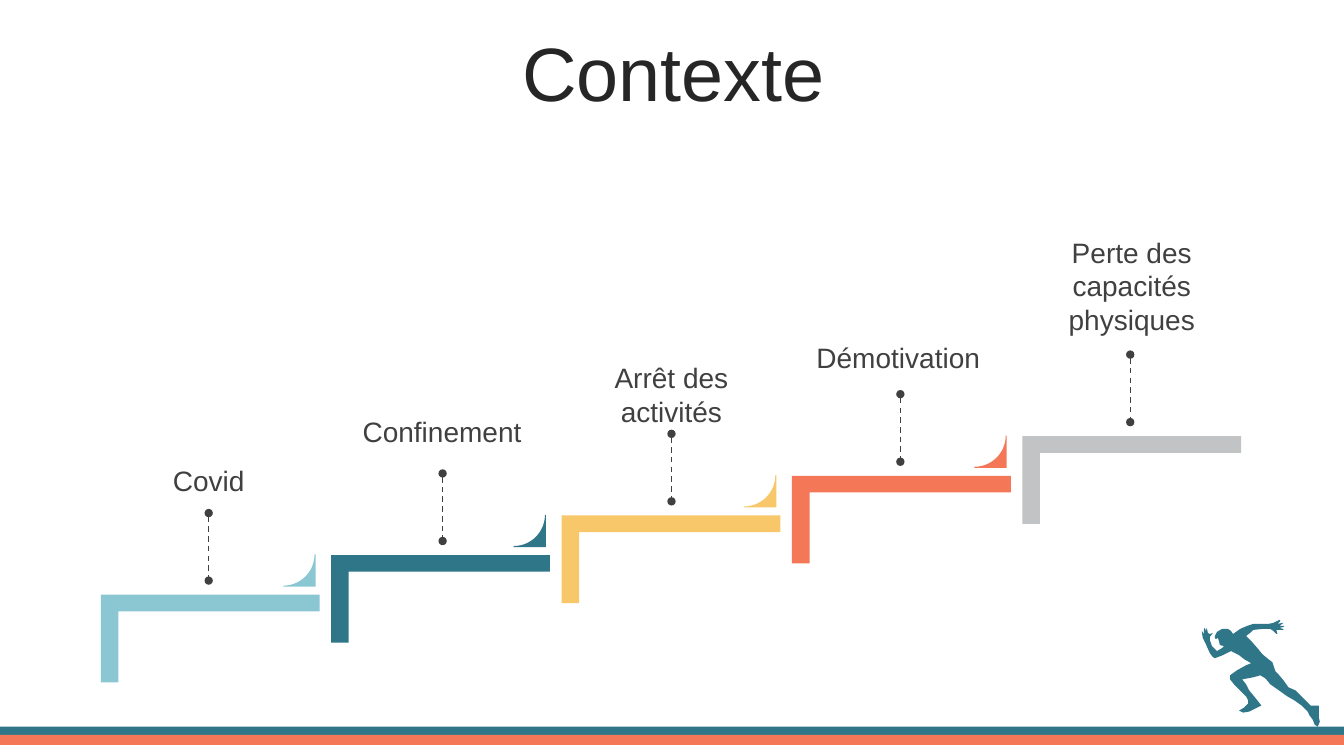
import math
from dataclasses import dataclass

import lxml.etree
import pptx
import pptx.dml.color
import pptx.enum.dml
import pptx.enum.shapes
import pptx.enum.text
import pptx.oxml.ns
import pptx.util

Inches = pptx.util.Inches
Points = list[tuple[float, float]]


@dataclass(frozen=True)
class Theme:
    font: str = "Arial"
    title_size: int = 54
    label_size: int = 20
    title: str = "262626"
    text: str = "404040"
    sky: str = "8AC7D3"
    teal: str = "307689"
    yellow: str = "F7C76A"
    coral: str = "F47758"
    grey: str = "C1C3C4"


@dataclass(frozen=True)
class Step:
    label: str
    color: str
    label_box: tuple[float, float, float, float]
    pin_x: float


THEME = Theme()

STEPS = [
    Step("Covid", THEME.sky, (0.85, 4.54, 2.44, 0.44), 2.07),
    Step("Confinement", THEME.teal, (3.22, 4.06, 2.33, 0.44), 4.39),
    Step("Arrêt des activités", THEME.yellow, (5.51, 3.53, 2.3, 0.77), 6.66),
    Step("Démotivation", THEME.coral, (7.76, 3.32, 2.3, 0.44), 8.93),
    Step("Perte des capacités physiques", THEME.grey, (10.02, 2.28, 2.41, 1.11), 11.21),
]

# Staircase geometry: each step moves right by RUN and up by RISE
FIRST_X, FIRST_Y = 1.0, 5.9
RUN, RISE = 2.285, 0.393
STEP_W, STEP_H = 2.17, 0.87
TAB_DX, TAB_DY, TAB_SIZE, TAB_RADIUS = 1.81, -0.4, 0.32, 0.31
PIN_DY, PIN_LENGTH = -0.81, 0.67

# Runner outline, starting from the back foot
RUNNER: Points = [
    (13.07, 7.21), (13.09, 7.16), (13.08, 7.11), (13.08, 7.0), (13.05, 7.0),
    (13.0, 7.0), (12.95, 6.95), (12.89, 6.89), (12.85, 6.85), (12.78, 6.82),
    (12.73, 6.75), (12.68, 6.69), (12.65, 6.66), (12.62, 6.57), (12.58, 6.54),
    (12.52, 6.49), (12.48, 6.44), (12.41, 6.36), (12.36, 6.31), (12.41, 6.27),
    # Back arm and hand
    (12.43, 6.25), (12.52, 6.24), (12.6, 6.24), (12.63, 6.26), (12.66, 6.29),
    (12.67, 6.29), (12.66, 6.25), (12.73, 6.25), (12.73, 6.24), (12.69, 6.23),
    (12.73, 6.22), (12.74, 6.21), (12.69, 6.21), (12.73, 6.18), (12.72, 6.18),
    (12.67, 6.19), (12.7, 6.16), (12.69, 6.15), (12.63, 6.18), (12.58, 6.19),
    (12.51, 6.19), (12.43, 6.19), (12.37, 6.21), (12.3, 6.24), (12.23, 6.29),
    # Head
    (12.21, 6.26), (12.18, 6.24), (12.12, 6.24), (12.07, 6.27), (12.05, 6.31),
    (12.05, 6.33), (12.06, 6.34), (12.08, 6.33), (12.09, 6.36), (12.1, 6.4),
    (12.14, 6.41), (12.12, 6.43), (12.07, 6.46),
    # Front arm and hand
    (12.02, 6.41), (12.0, 6.35), (12.0, 6.32), (12.03, 6.28), (12.0, 6.29),
    (11.98, 6.28), (11.97, 6.23), (11.96, 6.26), (11.95, 6.23), (11.94, 6.24),
    (11.94, 6.29), (11.92, 6.26), (11.92, 6.27), (11.93, 6.33), (11.96, 6.39),
    (12.0, 6.48), (12.03, 6.52), (12.05, 6.53), (12.13, 6.5), (12.21, 6.46),
    # Chest and front leg
    (12.29, 6.5), (12.34, 6.54), (12.41, 6.58), (12.36, 6.6), (12.27, 6.65),
    (12.2, 6.7), (12.2, 6.74), (12.24, 6.79), (12.3, 6.85), (12.36, 6.91),
    (12.38, 6.95), (12.38, 6.98), (12.34, 7.02), (12.29, 7.05), (12.33, 7.07),
    (12.39, 7.06), (12.45, 7.03), (12.51, 7.0), (12.48, 6.96), (12.44, 6.91),
    (12.39, 6.85), (12.36, 6.79), (12.32, 6.74), (12.43, 6.72), (12.5, 6.7),
    # Back leg
    (12.55, 6.73), (12.6, 6.79), (12.7, 6.86), (12.77, 6.91), (12.84, 6.95),
    (12.91, 7.0), (12.97, 7.06), (12.99, 7.1), (13.02, 7.14), (13.04, 7.19),
]


def rgb(color: str) -> pptx.dml.color.RGBColor:
    return pptx.dml.color.RGBColor.from_string(color)


def paint(sp, color: str) -> None:
    sp.shadow.inherit = False
    sp.fill.solid()
    sp.fill.fore_color.rgb = rgb(color)
    sp.line.fill.background()


def add_outline(shapes, points: Points, color: str) -> None:
    emu = [(Inches(x), Inches(y)) for x, y in points]
    builder = shapes.build_freeform(*emu[0], scale=1.0)
    builder.add_line_segments(emu[1:], close=True)
    paint(builder.convert_to_shape(), color)


def add_bar(shapes, y: float, color: str) -> None:
    kind = pptx.enum.shapes.MSO_SHAPE.RECTANGLE
    paint(shapes.add_shape(kind, 0, Inches(y), Inches(13.33), Inches(0.1)), color)


def add_text(shapes, box: tuple[float, float, float, float], text: str,
             size: int, color: str, spacing: float = 1.0) -> None:
    sp = shapes.add_textbox(*map(Inches, box))
    tf = sp.text_frame
    tf.word_wrap = True
    tf.vertical_anchor = pptx.enum.text.MSO_ANCHOR.MIDDLE
    p = tf.paragraphs[0]
    p.alignment = pptx.enum.text.PP_ALIGN.CENTER
    p.line_spacing = spacing
    r = p.add_run()
    r.text = text
    r.font.name = THEME.font
    r.font.size = pptx.util.Pt(size)
    r.font.color.rgb = rgb(color)


def add_stair(shapes, x: float, y: float, color: str) -> None:
    kind = pptx.enum.shapes.MSO_SHAPE.CORNER
    sp = shapes.add_shape(kind, Inches(x), Inches(y), Inches(STEP_W), Inches(STEP_H))
    sp.adjustments[0] = 0.19
    sp.adjustments[1] = 0.2
    sp._element.spPr.find(pptx.oxml.ns.qn("a:xfrm")).set("flipV", "1")
    paint(sp, color)


def add_tab(shapes, x: float, y: float, color: str) -> None:
    angles = [math.radians(a) for a in range(0, 91, 6)]
    arc = [(x + TAB_RADIUS * math.sin(a), y + TAB_RADIUS * math.cos(a)) for a in angles]
    corner = [(x + TAB_SIZE, y), (x + TAB_SIZE, y + TAB_SIZE), (x, y + TAB_SIZE)]
    add_outline(shapes, corner + arc, color)


def add_pin(shapes, x: float, y: float) -> None:
    kind = pptx.enum.shapes.MSO_CONNECTOR.STRAIGHT
    c = shapes.add_connector(kind, Inches(x), Inches(y), Inches(x), Inches(y + PIN_LENGTH))
    c.line.color.rgb = rgb(THEME.text)
    c.line.width = pptx.util.Pt(1)
    c.line.dash_style = pptx.enum.dml.MSO_LINE.DASH
    ln = c.line._get_or_add_ln()
    for end in ("a:headEnd", "a:tailEnd"):
        lxml.etree.SubElement(ln, pptx.oxml.ns.qn(end), type="oval")
    lxml.etree.SubElement(c._element.spPr, pptx.oxml.ns.qn("a:effectLst"))


def main() -> None:
    prs = pptx.Presentation()
    prs.slide_width, prs.slide_height = Inches(13.33), Inches(7.5)
    shapes = prs.slides.add_slide(prs.slide_layouts[6]).shapes

    # Runner, ground bars and title
    add_outline(shapes, RUNNER, THEME.teal)
    add_bar(shapes, 7.21, THEME.teal)
    add_bar(shapes, 7.29, THEME.coral)
    add_text(shapes, (0.35, 0.37, 12.66, 0.79), "Contexte",
             THEME.title_size, THEME.title, 0.9)

    # Staircase; the last step has no tab leading further up
    for i, step in enumerate(STEPS):
        x, y = FIRST_X + i * RUN, FIRST_Y - i * RISE
        add_stair(shapes, x, y, step.color)
        if i < len(STEPS) - 1:
            add_tab(shapes, x + TAB_DX, y + TAB_DY, step.color)
        add_text(shapes, step.label_box, step.label, THEME.label_size, THEME.text)
        add_pin(shapes, step.pin_x, y + PIN_DY)

    prs.save("out.pptx")


if __name__ == "__main__":
    main()
